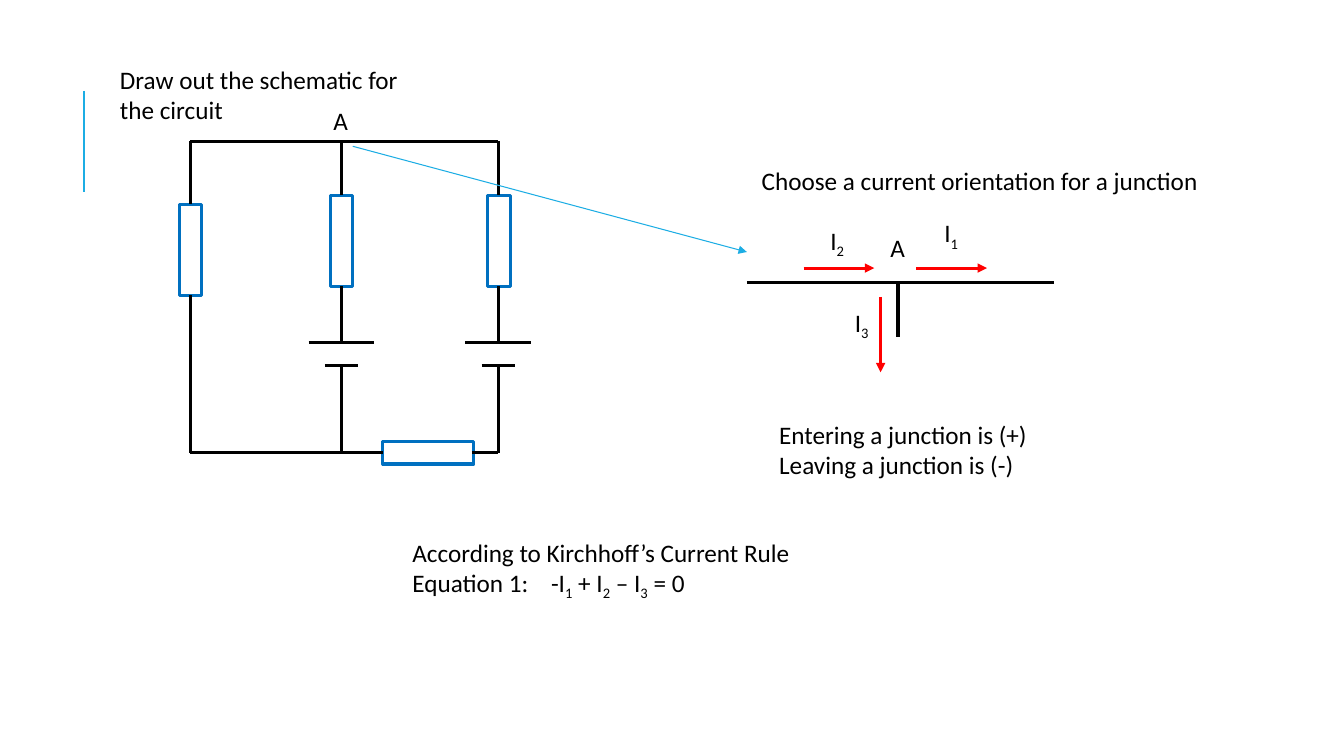
from lxml.etree import SubElement as Sub
from pptx import Presentation
from pptx.dml.color import RGBColor
from pptx.enum.shapes import MSO_CONNECTOR as Conn, MSO_SHAPE as Form
from pptx.enum.text import MSO_ANCHOR as Anchor, MSO_AUTO_SIZE as Auto, PP_ALIGN as Align
from pptx.oxml.ns import qn
from pptx.util import Pt

BLACK = RGBColor(0x00, 0x00, 0x00)
BLUE = RGBColor(0x00, 0x70, 0xC0)
CYAN = RGBColor(0x1C, 0xAD, 0xE4)
RED = RGBColor(0xFF, 0x00, 0x00)

deck = Presentation()
deck.slide_width, deck.slide_height = Pt(960), Pt(540)
slide = deck.slides.add_slide(deck.slide_layouts[5])
shapes = slide.shapes


def draw(x1, y1, x2, y2, color=BLACK, width=2.25, arrow=False):
    line = shapes.add_connector(Conn.STRAIGHT, Pt(x1), Pt(y1), Pt(x2), Pt(y2))
    line.line.color.rgb = color
    line.line.width = Pt(width)
    if arrow:
        Sub(line.line._get_or_add_ln(), qn("a:tailEnd"), type="triangle")
    Sub(line._element.spPr, qn("a:effectLst"))


def write(x, y, w, h, text, wrap=True):
    """Add a text box; parts between underscores are subscripts."""
    frame = shapes.add_textbox(Pt(x), Pt(y), Pt(w), Pt(h)).text_frame
    frame.word_wrap = wrap
    frame.text = text.replace("_", "")
    for para, row in zip(frame.paragraphs, text.split("\n")):
        para.text = ""
        for i, part in enumerate(row.split("_")):
            run = para.add_run()
            run.text = part
            run.font.name, run.font.size = "Calibri", Pt(18)
            run.font.color.rgb = BLACK
            if i % 2:
                run.font._element.set("baseline", "-25000")
    return frame


# Accent line and heading
draw(60, 65, 60, 137, CYAN, 1.5)
title = shapes.title
title.left, title.top, title.width, title.height = Pt(78.5), Pt(42.5), Pt(219.5), Pt(51)
frame = title.text_frame
frame.text = "Draw out the schematic for the circuit"
frame.word_wrap, frame.auto_size = True, Auto.NONE
frame.vertical_anchor = Anchor.TOP
head = frame.paragraphs[0]
head.alignment = Align.LEFT
font = head.runs[0].font
font.name, font.size = "Calibri", Pt(18)
font.color.rgb = BLACK

# Circuit: resistors
LEFT, MID, RIGHT = 136, 244, 356
TOP, BASE = 101, 323.5
LONG, THIN = 65, 16
for x, y, w, h in [(LEFT, 178.5, THIN, LONG), (MID, 172, THIN, LONG),
                   (RIGHT + 0.5, 172, THIN, LONG), (306, BASE, LONG, THIN)]:
    box = shapes.add_shape(Form.RECTANGLE, Pt(x - w / 2), Pt(y - h / 2), Pt(w), Pt(h))
    box.fill.background()
    box.line.color.rgb = BLUE
    box.line.width = Pt(2.25)
    box.shadow.inherit = False

# Circuit: wires and battery in the two right branches
for x in (MID, RIGHT):
    draw(x, TOP, x, 139.5)
    draw(x, 204.5, x, 244.5)
    draw(x - 23.5, 244.5, x + 23.5, 244.5)
    draw(x - 12, 261, x + 12, 261)
    draw(x, 261, x, BASE)

# Circuit: left branch, top and bottom wires
draw(LEFT, TOP, LEFT, 146)
draw(LEFT, 211, LEFT, BASE)
draw(LEFT, TOP, RIGHT, TOP)
draw(LEFT, BASE, 273.5, BASE)
draw(337, BASE, RIGHT, BASE)

# Junction A with its currents
draw(533.5, 202, 753, 202)
draw(641.5, 202, 641.5, 241)
for x in (574, 654.5):
    draw(x, 191.5, x + 50.5, 191.5, RED, arrow=True)
draw(629, 212, 629, 266, RED, arrow=True)
draw(252, 104.5, 533.5, 180, CYAN, 0.75, arrow=True)

# Labels
for x, y, name in [(231, 72, "A"), (629, 162.5, "A"), (667.5, 152, "I_1_"),
                   (586, 157.5, "I_2_"), (603.5, 216, "I_3_")]:
    write(x, y, 25, 29, name, False)

# Notes
write(537, 114.5, 327.5, 29, "Choose a current orientation for a junction")
write(549.5, 296, 211, 51, "Entering a junction is (+)\nLeaving a junction is (-)")
rule = write(287.5, 380, 311, 51,
             "According to Kirchhoff’s Current Rule\n"
             "Equation 1:\t-I_1_ + I_2_ – I_3_ = 0")
tabs = Sub(rule.paragraphs[1]._p.get_or_add_pPr(), qn("a:tabLst"))
Sub(tabs, qn("a:tab"), pos=str(Pt(99)), algn="l")

deck.save("out.pptx")
